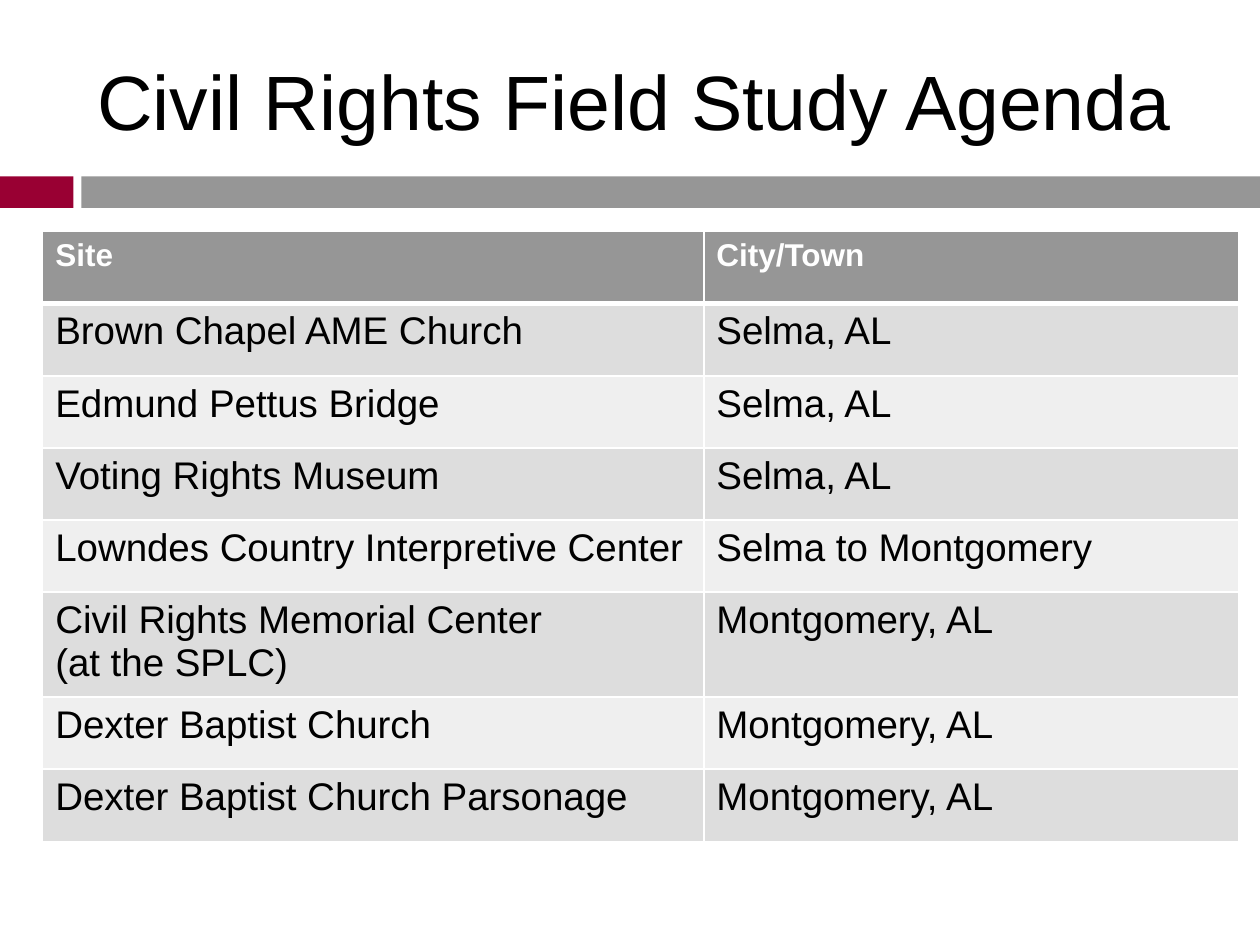
from lxml.etree import SubElement
from pptx import Presentation
from pptx.dml.color import RGBColor
from pptx.enum.shapes import MSO_SHAPE
from pptx.enum.text import MSO_ANCHOR, PP_ALIGN
from pptx.oxml.ns import qn
from pptx.util import Pt

TITLE = "Civil Rights Field Study Agenda"
AGENDA = [
    ("Site", "City/Town"),
    ("Brown Chapel AME Church", "Selma, AL"),
    ("Edmund Pettus Bridge", "Selma, AL"),
    ("Voting Rights Museum", "Selma, AL"),
    ("Lowndes Country Interpretive Center", "Selma to Montgomery"),
    ("Civil Rights Memorial Center\n(at the SPLC)", "Montgomery, AL"),
    ("Dexter Baptist Church", "Montgomery, AL"),
    ("Dexter Baptist Church Parsonage", "Montgomery, AL"),
]

THEME = {
    "font": "Arial",
    "title": {"size": 44, "color": "000000", "bold": False},
    "header": {"size": 18, "color": "FFFFFF", "bold": True},
    "body": {"size": 22, "color": "000000", "bold": False},
    "accent": "990033",
    "gray": "969696",
    "bands": ("DDDDDD", "EFEFEF"),
    "rule": "FFFFFF",
}

SLIDE_W, SLIDE_H = 720, 540
BAND_TOP, BAND_H = 100.8, 18
ACCENT_W, BAND_GAP = 42, 4.5
TITLE_BOX = (48.4, 18, 642, 78)
TABLE_LEFT, TABLE_TOP = 24.4, 132.4
COLUMN_WIDTHS = (377.8, 305.6)
ROW_H = 41.2


def points(*lengths):
    return [Pt(length) for length in lengths]


def paint(fill, color):
    fill.solid()
    fill.fore_color.rgb = RGBColor.from_string(color)


def write(frame, text, style):
    frame.text = text
    for paragraph in frame.paragraphs:
        paragraph.alignment = PP_ALIGN.LEFT
        font = paragraph.runs[0].font
        formats = {"name": THEME["font"], "size": Pt(style["size"]), "bold": style["bold"]}
        for attribute, value in formats.items():
            setattr(font, attribute, value)
        font.color.rgb = RGBColor.from_string(style["color"])


def add_band(slide, left, width, color):
    band = slide.shapes.add_shape(
        MSO_SHAPE.RECTANGLE, *points(left, BAND_TOP, width, BAND_H))
    band.shadow.inherit = False
    paint(band.fill, color)
    band.line.fill.background()


def add_title(slide):
    title = slide.shapes.add_textbox(*points(*TITLE_BOX)).text_frame
    title.word_wrap = True
    title.vertical_anchor = MSO_ANCHOR.MIDDLE
    write(title, TITLE, THEME["title"])


def set_borders(cell, widths):
    """Draw cell edges; must run before the cell is filled, as lines come first in tcPr."""
    properties = cell._tc.get_or_add_tcPr()
    for edge, width in widths.items():
        line = SubElement(properties, qn(f"a:ln{edge}"), w=str(Pt(width)))
        fill = SubElement(line, qn("a:solidFill"))
        SubElement(fill, qn("a:srgbClr"), val=THEME["rule"])


def add_agenda(slide):
    size = (sum(COLUMN_WIDTHS), ROW_H * len(AGENDA))
    table = slide.shapes.add_table(
        len(AGENDA), len(COLUMN_WIDTHS), *points(TABLE_LEFT, TABLE_TOP, *size)).table
    for column, width in zip(table.columns, COLUMN_WIDTHS):
        column.width = Pt(width)
    for r, entry in enumerate(AGENDA):
        table.rows[r].height = Pt(ROW_H)
        is_header = r == 0
        color = THEME["gray"] if is_header else THEME["bands"][(r - 1) % 2]
        style = THEME["header" if is_header else "body"]
        edges = {"L": 1, "R": 1, "T": 3 if r == 1 else 1, "B": 3 if is_header else 1}
        for c, text in enumerate(entry):
            cell = table.cell(r, c)
            set_borders(cell, edges)
            paint(cell.fill, color)
            write(cell.text_frame, text, style)


def main():
    deck = Presentation()
    deck.slide_width, deck.slide_height = points(SLIDE_W, SLIDE_H)
    slide = deck.slides.add_slide(deck.slide_layouts[6])
    gray_left = ACCENT_W + BAND_GAP
    add_band(slide, 0, ACCENT_W, THEME["accent"])
    add_band(slide, gray_left, SLIDE_W - gray_left, THEME["gray"])
    add_title(slide)
    add_agenda(slide)
    deck.save("out.pptx")


if __name__ == "__main__":
    main()
